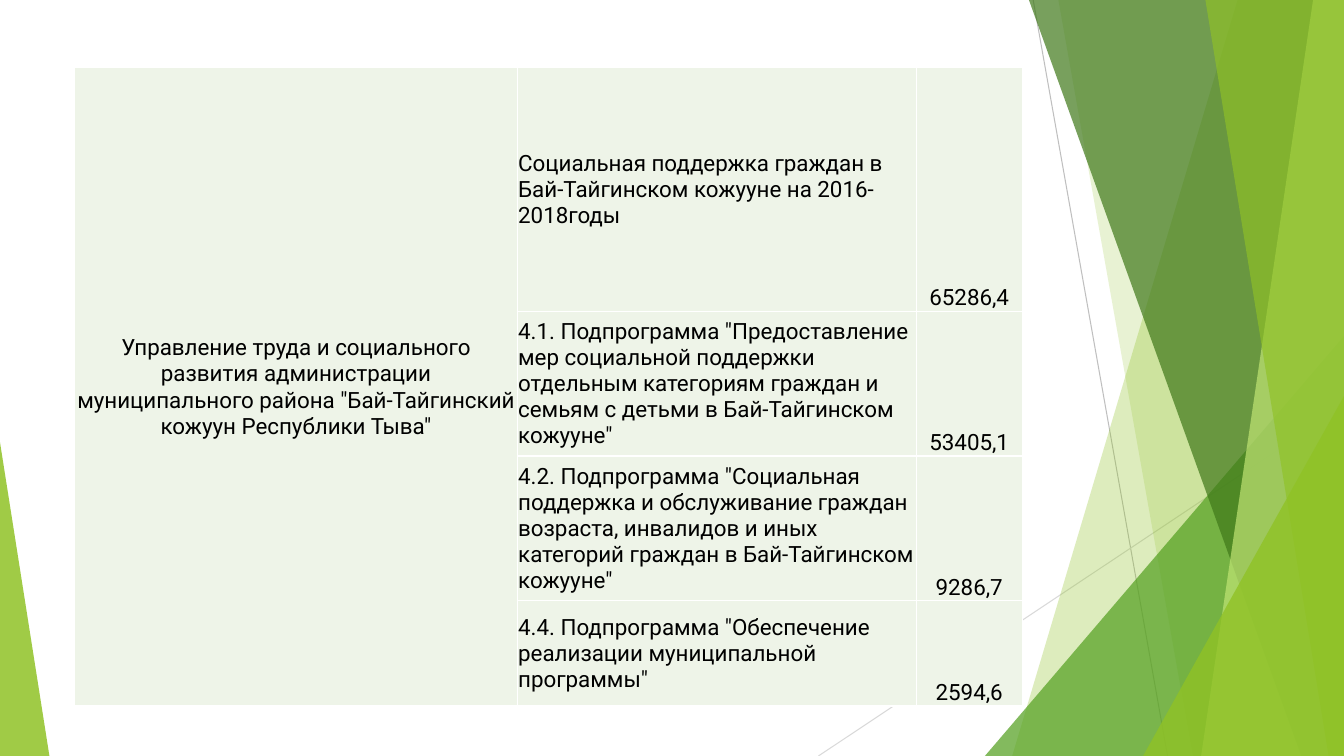
from lxml.etree import SubElement
from pptx import Presentation
from pptx.dml.color import RGBColor
from pptx.enum.shapes import MSO_CONNECTOR, MSO_SHAPE
from pptx.enum.text import MSO_ANCHOR, PP_ALIGN
from pptx.oxml.ns import qn
from pptx.util import Pt

WIDTH, HEIGHT = 960, 540
WHITE = RGBColor(0xFF, 0xFF, 0xFF)
BLACK = RGBColor(0x00, 0x00, 0x00)
GREY = RGBColor(0xBF, 0xBF, 0xBF)
LIGHT_GREY = RGBColor(0xD9, 0xD9, 0xD9)
LIME = RGBColor(0x90, 0xC2, 0x26)
GREEN = RGBColor(0x54, 0xA0, 0x21)
DARK_GREEN = RGBColor(0x3F, 0x78, 0x19)
PALE_LIME = RGBColor(0xC0, 0xE4, 0x74)
CELL_FILL = RGBColor(0xEE, 0xF4, 0xE8)

DEPARTMENT = (
    'Управление труда и социального развития администрации '
    'муниципального района "Бай-Тайгинский кожуун Республики Тыва"'
)
PROGRAMS = [
    ("Социальная поддержка граждан в Бай-Тайгинском кожууне на 2016-2018годы", "65286,4"),
    ('4.1. Подпрограмма "Предоставление мер социальной поддержки отдельным '
     'категориям граждан и семьям с детьми в Бай-Тайгинском кожууне"', "53405,1"),
    ('4.2. Подпрограмма "Социальная поддержка и обслуживание граждан возраста, '
     'инвалидов и иных категорий граждан в Бай-Тайгинском кожууне"', "9286,7"),
    ('4.4. Подпрограмма "Обеспечение реализации муниципальной программы"', "2594,6"),
]
COLUMN_WIDTHS = [316, 285, 75.7]
ROW_HEIGHTS = [174, 103.4, 103.4, 75]


def add_line(page, start, end, color):
    line = page.shapes.add_connector(
        MSO_CONNECTOR.STRAIGHT, *(Pt(value) for value in start + end))
    line.line.color.rgb = color
    line.line.width = Pt(0.75)
    SubElement(line._element.spPr, qn("a:effectLst"))


def paint(shape, color, opacity):
    shape.shadow.inherit = False
    shape.line.fill.background()
    shape.fill.solid()
    shape.fill.fore_color.rgb = color
    tint = shape._element.spPr.find(qn("a:solidFill"))[0]
    SubElement(tint, qn("a:alpha"), val=str(opacity * 1000))


def add_band(page, top_x, bottom_x, color, opacity):
    builder = page.shapes.build_freeform(Pt(top_x), 0)
    corners = [(WIDTH, 0), (WIDTH, HEIGHT), (bottom_x, HEIGHT)]
    builder.add_line_segments([(Pt(x), Pt(y)) for x, y in corners])
    paint(builder.convert_to_shape(), color, opacity)


def add_corner(page, left, top, width, apex, color, opacity):
    corner = page.shapes.add_shape(
        MSO_SHAPE.ISOSCELES_TRIANGLE, Pt(left), Pt(top), Pt(width), Pt(HEIGHT - top))
    corner.adjustments[0] = apex
    paint(corner, color, opacity)


def add_decoration(page):
    add_line(page, (738, 0), (834, HEIGHT), GREY)
    add_line(page, (WIDTH, 290), (584.6, HEIGHT), LIGHT_GREY)
    add_band(page, 884, 723, LIME, 30)
    add_band(page, 756, 852, LIME, 20)
    add_corner(page, 703.5, 240, 256.5, 1, GREEN, 72)
    add_band(page, 735, 929.5, DARK_GREEN, 70)
    add_band(page, 938, 858, PALE_LIME, 70)
    add_band(page, 861, 949, LIME, 65)
    add_corner(page, 816.5, 283, 143.5, 1, LIME, 80)
    add_corner(page, 0, 316, 35.3, 0, LIME, 85)


def style_cell(cell):
    cell.margin_left = cell.margin_right = cell.margin_top = Pt(0.7)
    cell.margin_bottom = 0
    properties = cell._tc.get_or_add_tcPr()
    for side in ("lnL", "lnR", "lnT", "lnB"):
        border = SubElement(properties, qn(f"a:{side}"), w=str(Pt(1)))
        fill = SubElement(border, qn("a:solidFill"))
        SubElement(fill, qn("a:srgbClr"), val=str(WHITE))
    cell.fill.solid()
    cell.fill.fore_color.rgb = CELL_FILL


def write_cell(cell, text, alignment, anchor):
    cell.text = text
    cell.vertical_anchor = anchor
    paragraph = cell.text_frame.paragraphs[0]
    paragraph.alignment = alignment
    paragraph.font.name = "Roboto"
    paragraph.font.size = Pt(16)
    paragraph.font.color.rgb = BLACK


def add_budget_table(page):
    frame = page.shapes.add_table(
        len(ROW_HEIGHTS), len(COLUMN_WIDTHS), Pt(53.5), Pt(48.4),
        Pt(sum(COLUMN_WIDTHS)), Pt(sum(ROW_HEIGHTS)))
    table = frame.table
    table.first_row = table.horz_banding = False
    for column, width in zip(table.columns, COLUMN_WIDTHS):
        column.width = Pt(width)
    for row, height in zip(table.rows, ROW_HEIGHTS):
        row.height = Pt(height)
    for cell in table.iter_cells():
        style_cell(cell)
    department = table.cell(0, 0)
    department.merge(table.cell(len(PROGRAMS) - 1, 0))
    write_cell(department, DEPARTMENT, PP_ALIGN.CENTER, MSO_ANCHOR.MIDDLE)
    for index, (program, amount) in enumerate(PROGRAMS):
        write_cell(table.cell(index, 1), program, PP_ALIGN.LEFT, MSO_ANCHOR.MIDDLE)
        write_cell(table.cell(index, 2), amount, PP_ALIGN.CENTER, MSO_ANCHOR.BOTTOM)


def main():
    deck = Presentation()
    deck.slide_width, deck.slide_height = Pt(WIDTH), Pt(HEIGHT)
    page = deck.slides.add_slide(deck.slide_layouts[6])
    add_decoration(page)
    add_budget_table(page)
    deck.save("out.pptx")


if __name__ == "__main__":
    main()
